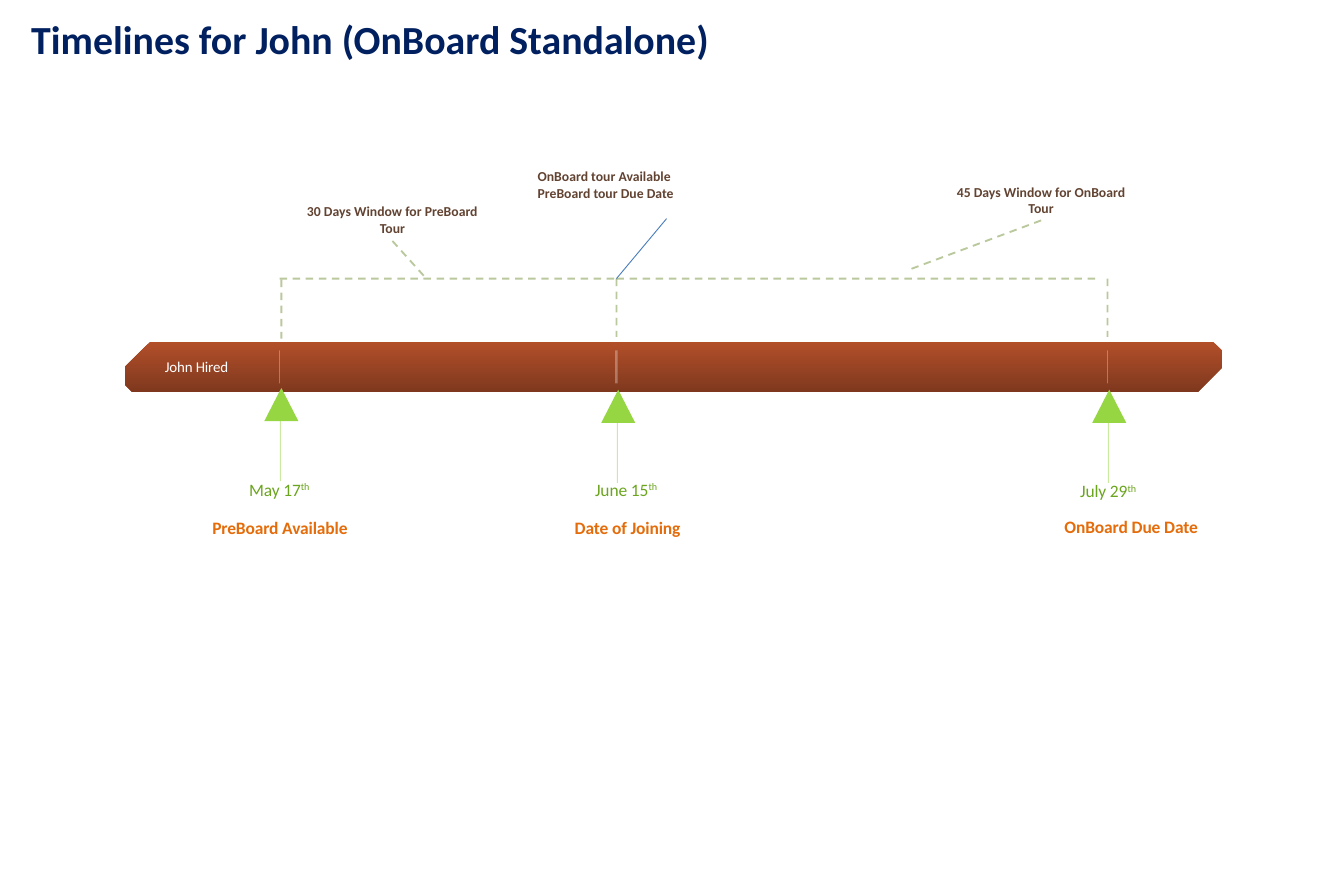
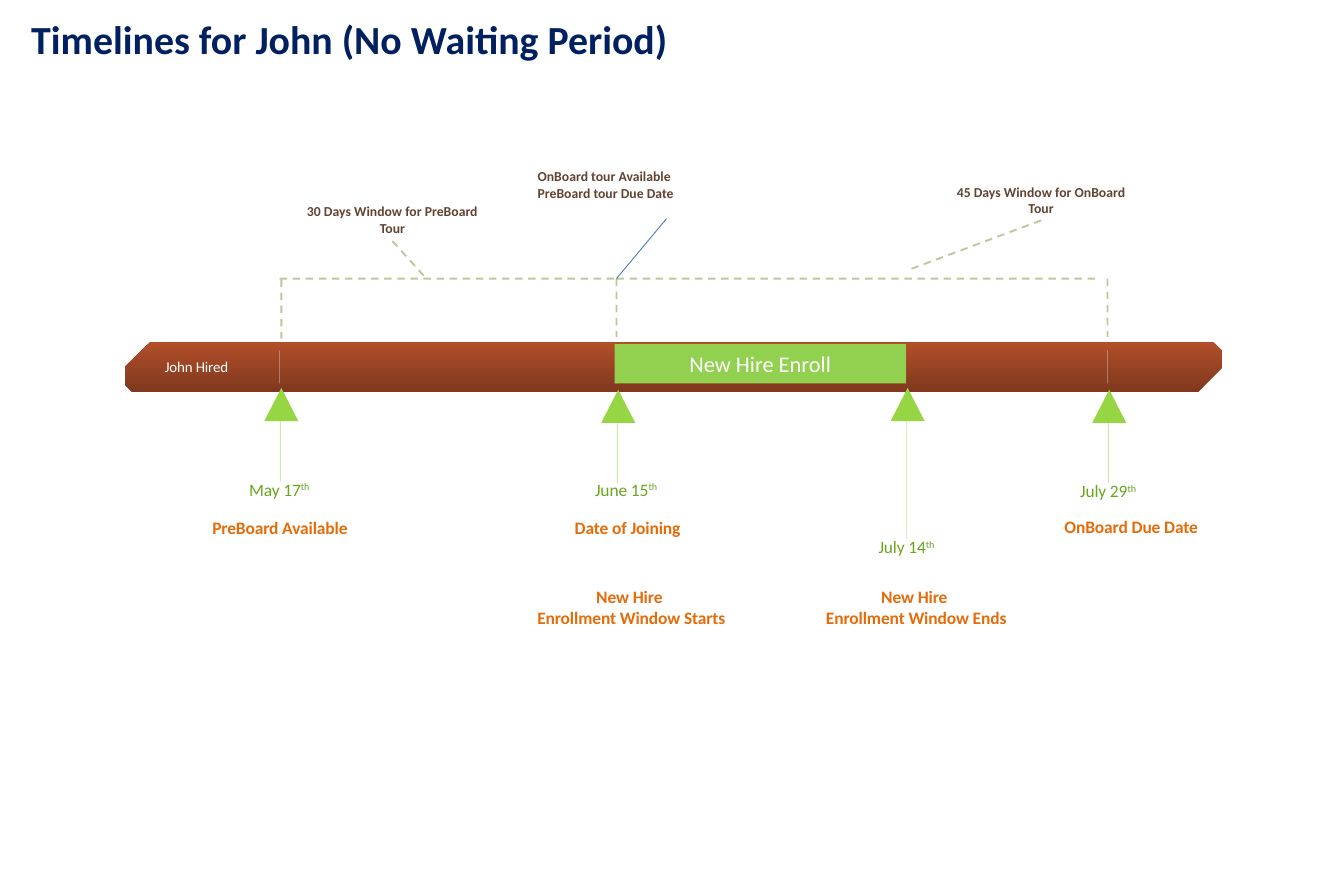
from dataclasses import dataclass

from lxml import etree
from pptx import Presentation
from pptx.dml.color import RGBColor
from pptx.enum.dml import MSO_LINE
from pptx.enum.shapes import MSO_CONNECTOR, MSO_SHAPE
from pptx.enum.text import MSO_ANCHOR, PP_ALIGN
from pptx.oxml.ns import qn
from pptx.util import Emu, Pt

STRAIGHT = MSO_CONNECTOR.STRAIGHT
SNIPPED, TRIANGLE, RECTANGLE = (
    MSO_SHAPE.SNIP_2_DIAG_RECTANGLE, MSO_SHAPE.ISOSCELES_TRIANGLE, MSO_SHAPE.RECTANGLE)
DASH = MSO_LINE.DASH
TOP, MIDDLE = MSO_ANCHOR.TOP, MSO_ANCHOR.MIDDLE
LEFT, CENTER = PP_ALIGN.LEFT, PP_ALIGN.CENTER

FONT = "Calibri"
WHITE, NAVY, BROWN, ORANGE = "FFFFFF", "002060", "624332", "E46C0A"
MARKER, DATE, BRACKET, POINTER, ENROLL = "96D642", "6BA51F", "77933C", "4B7EBC", "92D050"
BAR_TOP, BAR_BOTTOM = "B24F29", "7F381E"

MARKER_WIDTH, MARKER_HEIGHT = 38, 37
TICK_TOP, TICK_HEIGHT = 391, 37
DATE_WIDTH, DATE_HEIGHT = 150, 24
CAPTION_WIDTH = 253
BRACKET_Y = 311


@dataclass(frozen=True)
class TextStyle:
    size: int
    color: str
    bold: bool = False
    align: PP_ALIGN = CENTER
    anchor: MSO_ANCHOR = MIDDLE
    tight: bool = False
    inset: tuple[int, int] = (0, 0)


@dataclass(frozen=True)
class LineStyle:
    color: str
    width: float
    opacity: int = 100
    dashed: bool = False


@dataclass(frozen=True)
class Box:
    left: int
    top: int
    width: int
    height: int


@dataclass(frozen=True)
class Caption:
    center: int
    top: int
    height: int
    lines: tuple[str, ...]


@dataclass(frozen=True)
class Milestone:
    tick_x: int
    marker_top: int
    stem_bottom: int
    date: str
    date_center: int
    date_top: int
    captions: tuple[Caption, ...]
    tick_width: float = 0.5


@dataclass(frozen=True)
class Note:
    box: Box
    lines: tuple[str, ...]
    align: PP_ALIGN = CENTER


@dataclass(frozen=True)
class Timeline:
    title: str
    milestones: tuple[Milestone, ...]
    enroll: str = ""


TITLE_STYLE = TextStyle(32, NAVY, bold=True, align=LEFT, anchor=TOP, inset=(10, 5))
START_STYLE = TextStyle(12, WHITE, align=LEFT, tight=True)
DATE_STYLE = TextStyle(14, DATE, tight=True)
CAPTION_STYLE = TextStyle(14, ORANGE, bold=True, tight=True)
ENROLL_STYLE = TextStyle(18, WHITE, inset=(10, 5))

BRACKET_LINE = LineStyle(BRACKET, 1.5, 50, dashed=True)
STEM_LINE = LineStyle(MARKER, 0.75, 50)
POINTER_LINE = LineStyle(POINTER, 0.75)

BRACKETS = (
    (312, BRACKET_Y, 688, BRACKET_Y),
    (688, BRACKET_Y, 1225, BRACKET_Y),
    (314, 312, 314, 378),
    (688, BRACKET_Y, 688, 376),
    (1236, BRACKET_Y, 1236, 376),
    (438, 269, 475, 310),
    (1162, 246, 1012, 302),
)
NOTES = (
    Note(Box(338, 222, 200, 46), ("30 Days Window for PreBoard Tour",)),
    Note(Box(1062, 200, 200, 46), ("45 Days Window for OnBoard Tour",)),
    Note(Box(600, 167, 288, 78), ("OnBoard tour Available", "PreBoard tour Due Date"), LEFT),
)

JOINING = Caption(700, 578, 22, ("Date of Joining",))
ENROLL_STARTS = Caption(702, 644, 67, ("New Hire", " Enrollment Window Starts"))
ENROLL_ENDS = Caption(1020, 644, 67, ("New Hire", " Enrollment Window Ends"))
PREBOARD = Milestone(312, 433, 537, "May 17", 313, 534,
                     (Caption(312, 578, 22, ("PreBoard Available",)),))
DUE = Milestone(1236, 435, 539, "July 29", 1238, 536,
                (Caption(1262, 578, 20, ("OnBoard Due Date",)),))
ENROLL_END = Milestone(1011, 433, 601, "July 14", 1013, 598, (ENROLL_ENDS,))


def joining(*captions: Caption) -> Milestone:
    """Return the joining milestone with its captions."""
    return Milestone(688, 435, 539, "June 15", 700, 534, captions, tick_width=2)


TIMELINES = (
    Timeline("Timelines for John (OnBoard Standalone)", (joining(JOINING), PREBOARD, DUE)),
    Timeline("Timelines for John (No Waiting Period)",
             (joining(JOINING, ENROLL_STARTS), PREBOARD, DUE, ENROLL_END), "New Hire Enroll"),
)


def px(length: int) -> Emu:
    """Convert px, a hundred to the inch, into EMU."""
    return Emu(length * 9144)


def rgb(color: str) -> RGBColor:
    """Turn a hex string into a colour."""
    return RGBColor.from_string(color)


def add_run(paragraph, text: str, style: TextStyle, raised: bool = False) -> None:
    """Append one styled run."""
    run = paragraph.add_run()
    run.text = text
    run.font.name = FONT
    run.font.size = Pt(style.size)
    run.font.bold = style.bold
    run.font.color.rgb = rgb(style.color)
    properties = run._r.get_or_add_rPr()
    if style.tight:
        properties.set("spc", "-10")
    if raised:
        properties.set("baseline", "30000")


def write(shape, lines: tuple[str, ...], style: TextStyle, suffix: str = "") -> None:
    """Fill a shape with paragraphs and an optional raised suffix."""
    frame = shape.text_frame
    frame.word_wrap = True
    frame.vertical_anchor = style.anchor
    frame.margin_left = frame.margin_right = px(style.inset[0])
    frame.margin_top = frame.margin_bottom = px(style.inset[1])
    for index, line in enumerate(lines):
        paragraph = frame.add_paragraph() if index else frame.paragraphs[0]
        paragraph.alignment = style.align
        add_run(paragraph, line, style)
    if suffix:
        add_run(paragraph, suffix, style, raised=True)


def add_text(slide, box: Box, lines: tuple[str, ...], style: TextStyle, suffix: str = "") -> None:
    """Place a text box."""
    label = slide.shapes.add_textbox(px(box.left), px(box.top), px(box.width), px(box.height))
    write(label, lines, style, suffix)


def add_block(slide, kind: MSO_SHAPE, box: Box, color: str):
    """Place a plain filled shape without outline."""
    block = slide.shapes.add_shape(kind, px(box.left), px(box.top), px(box.width), px(box.height))
    block.shadow.inherit = False
    block.line.fill.background()
    block.fill.solid()
    block.fill.fore_color.rgb = rgb(color)
    return block


def add_line(slide, ends: tuple[int, int, int, int], style: LineStyle) -> None:
    """Draw a straight line between two points."""
    line = slide.shapes.add_connector(STRAIGHT, *map(px, ends))
    line.line.color.rgb = rgb(style.color)
    line.line.width = Pt(style.width)
    if style.dashed:
        line.line.dash_style = DASH
    properties = line._element.spPr
    if style.opacity < 100:
        color = properties.find(".//" + qn("a:srgbClr"))
        etree.SubElement(color, qn("a:alpha")).set("val", str(style.opacity * 1000))
    etree.SubElement(properties, qn("a:effectLst"))


def draw_bar(slide) -> None:
    """Draw the gradient bar with its starting label."""
    bar = add_block(slide, SNIPPED, Box(139, 382, 1225, 56), BAR_TOP)
    bar.adjustments[0], bar.adjustments[1] = 1, 0.17
    bar.fill.gradient()
    bar.fill.gradient_angle = 270
    for stop, color, position in zip(bar.fill.gradient_stops, (BAR_TOP, BAR_BOTTOM), (0, 1)):
        stop.color.rgb = rgb(color)
        stop.position = position
    add_text(slide, Box(184, 396, 127, 27), ("John Hired",), START_STYLE)


def draw_milestone(slide, milestone: Milestone) -> None:
    """Draw tick, marker, stem, date and captions of a milestone."""
    x, top = milestone.tick_x, milestone.marker_top
    add_line(slide, (x, TICK_TOP, x, TICK_TOP + TICK_HEIGHT),
             LineStyle(WHITE, milestone.tick_width, 30))
    add_block(slide, TRIANGLE, Box(x - 17, top, MARKER_WIDTH, MARKER_HEIGHT), MARKER)
    add_line(slide, (x + 1, top + MARKER_HEIGHT, x + 1, milestone.stem_bottom), STEM_LINE)
    add_text(slide, Box(milestone.date_center - DATE_WIDTH // 2, milestone.date_top,
                        DATE_WIDTH, DATE_HEIGHT), (milestone.date,), DATE_STYLE, "th ")
    for caption in milestone.captions:
        add_text(slide, Box(caption.center - CAPTION_WIDTH // 2, caption.top,
                            CAPTION_WIDTH, caption.height), caption.lines, CAPTION_STYLE)


def draw_windows(slide) -> None:
    """Draw the dashed brackets and the notes above the bar."""
    for ends in BRACKETS:
        add_line(slide, ends, BRACKET_LINE)
    for note in NOTES:
        add_text(slide, note.box, note.lines, TextStyle(11, BROWN, bold=True, align=note.align))
    add_line(slide, (688, BRACKET_Y, 744, 244), POINTER_LINE)


def draw_timeline(slide, timeline: Timeline) -> None:
    """Draw one complete timeline slide."""
    draw_bar(slide)
    add_text(slide, Box(25, 11, 1438, 89), (timeline.title,), TITLE_STYLE)
    for milestone in timeline.milestones:
        draw_milestone(slide, milestone)
    draw_windows(slide)
    if timeline.enroll:
        enroll = add_block(slide, RECTANGLE, Box(686, 384, 325, 44), ENROLL)
        write(enroll, (timeline.enroll,), ENROLL_STYLE)


def main() -> None:
    """Build and save the presentation."""
    deck = Presentation()
    deck.slide_width, deck.slide_height = px(1500), px(1000)
    for timeline in TIMELINES:
        draw_timeline(deck.slides.add_slide(deck.slide_layouts[6]), timeline)
    deck.save("out.pptx")


if __name__ == "__main__":
    main()
